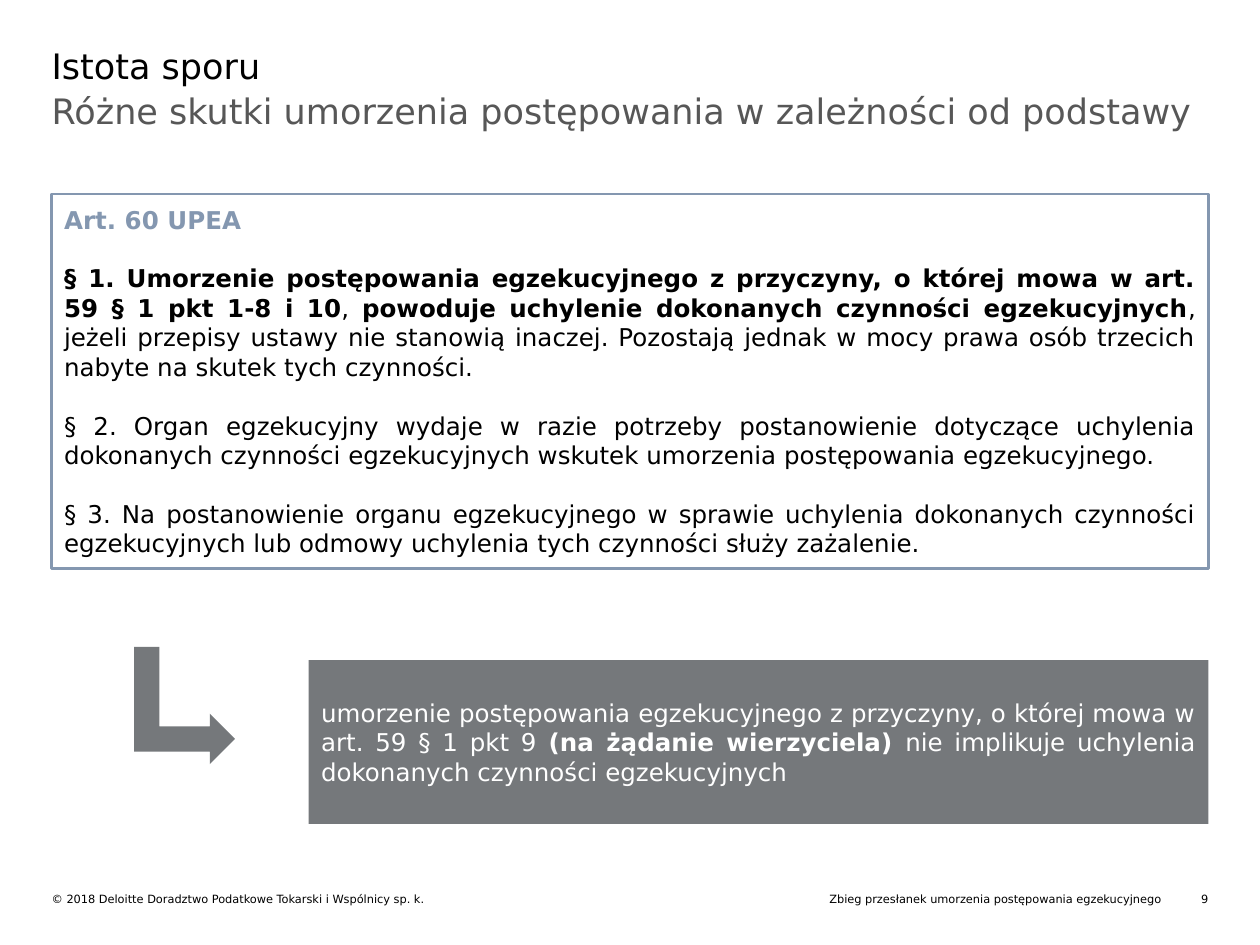
import dataclasses
import pptx
import pptx.util
import pptx.dml.color
import pptx.enum.shapes
import pptx.enum.text
import pptx.oxml
import pptx.oxml.ns

SHAPE = pptx.enum.shapes.MSO_SHAPE
ALIGN = pptx.enum.text.PP_ALIGN
ANCHOR = pptx.enum.text.MSO_ANCHOR


@dataclasses.dataclass(frozen=True)
class Theme:
    font: str = "DejaVu Sans"
    ink: str = "000000"
    subtitle: str = "575757"
    accent: str = "8497B0"
    dark: str = "75787B"
    light: str = "FFFFFF"
    heading: float = 20
    body: float = 14
    footer: float = 6.5
    gap: float = 16.8
    inset: float = 0.1


class Deck:
    """Builds slides on a grid of 100 columns by 75 rows."""

    def __init__(self, theme):
        self.theme = theme
        self.prs = pptx.Presentation()
        self.prs.slide_width = pptx.util.Inches(10)
        self.prs.slide_height = pptx.util.Inches(7.5)
        self.s = None

    def new_slide(self):
        self.s = self.prs.slides.add_slide(self.prs.slide_layouts[1])

    def box(self, col, row, cols, rows):
        w, h = self.prs.slide_width, self.prs.slide_height
        return int(col * w / 100), int(row * h / 75), int(cols * w / 100), int(rows * h / 75)

    def color(self, value):
        return pptx.dml.color.RGBColor.from_string(value)

    def add_text(self, sp, paragraphs, size, color, align=ALIGN.LEFT, anchor=ANCHOR.TOP, inset=0, gap=0):
        tf = sp.text_frame
        tf.word_wrap = True
        tf.auto_size = pptx.enum.text.MSO_AUTO_SIZE.NONE
        tf.vertical_anchor = anchor
        tf.margin_left = tf.margin_right = tf.margin_top = tf.margin_bottom = pptx.util.Inches(inset)
        for i, runs in enumerate(paragraphs):
            p = tf.add_paragraph() if i else tf.paragraphs[0]
            p.alignment = align
            p.space_before = pptx.util.Pt(gap if i else 0)
            for text, bold, *tint in runs:
                r = p.add_run()
                r.text = text
                r.font.name = self.theme.font
                r.font.size = pptx.util.Pt(size)
                r.font.bold = bold
                r.font.color.rgb = self.color(tint[0] if tint else color)

    def placeholder(self, index, place, text, color):
        sp = self.s.placeholders[index]
        sp.left, sp.top, sp.width, sp.height = self.box(*place)
        self.add_text(sp, [[(text, False)]], self.theme.heading, color)
        pPr = sp.text_frame.paragraphs[0]._p.get_or_add_pPr()
        pPr.set("marL", "0")
        pPr.set("indent", "0")
        pPr.append(pptx.oxml.parse_xml(f"<a:buNone {pptx.oxml.ns.nsdecls('a')}/>"))

    def shape(self, kind, place, fill=None, line=None, rotation=0):
        sp = self.s.shapes.add_shape(kind, *self.box(*place))
        sp.shadow.inherit = False
        sp.rotation = rotation
        if fill:
            sp.fill.solid()
            sp.fill.fore_color.rgb = self.color(fill)
        else:
            sp.fill.background()
        if line:
            sp.line.color.rgb = self.color(line)
            sp.line.width = pptx.util.Pt(1.5)
        else:
            sp.line.fill.background()
        return sp

    def panel(self, kind, place, paragraphs, color, fill=None, line=None):
        sp = self.shape(kind, place, fill, line)
        self.add_text(sp, paragraphs, self.theme.body, color, ALIGN.JUSTIFY,
                      ANCHOR.MIDDLE, self.theme.inset, self.theme.gap)

    def footer(self, place, text, align):
        sp = self.s.shapes.add_textbox(*self.box(*place))
        self.add_text(sp, [[(text, False)]], self.theme.footer, self.theme.ink, align)


def main():
    t = Theme()
    d = Deck(t)
    d.new_slide()
    left, width, foot = 4.1, 91.8, 70.8
    d.placeholder(0, (left, 3.5, width, 7.6), "Istota sporu", t.ink)
    d.placeholder(1, (left, 7.1, width, 8.3),
                  "Różne skutki umorzenia postępowania w zależności od podstawy", t.subtitle)

    article = [
        [("Art. 60 UPEA", True, t.accent)],
        [("§ 1. Umorzenie postępowania egzekucyjnego z przyczyny, o której mowa w art. 59 § 1 pkt 1-8 i 10", True),
         (", ", False),
         ("powoduje uchylenie dokonanych czynności egzekucyjnych", True),
         (", jeżeli przepisy ustawy nie stanowią inaczej. Pozostają jednak w mocy prawa osób trzecich "
          "nabyte na skutek tych czynności.", False)],
        [("§ 2. Organ egzekucyjny wydaje w razie potrzeby postanowienie dotyczące uchylenia dokonanych "
          "czynności egzekucyjnych wskutek umorzenia postępowania egzekucyjnego.", False)],
        [("§ 3. Na postanowienie organu egzekucyjnego w sprawie uchylenia dokonanych czynności "
          "egzekucyjnych lub odmowy uchylenia tych czynności służy zażalenie.", False)],
    ]
    d.panel(SHAPE.FLOWCHART_PROCESS, (left, 15.4, width, 29.7), article, t.ink, line=t.accent)

    conclusion = [[
        ("umorzenie postępowania egzekucyjnego z przyczyny, o której mowa w art. 59 § 1 pkt 9 ", False),
        ("(na żądanie wierzyciela) ", True),
        ("nie implikuje uchylenia dokonanych czynności egzekucyjnych", False),
    ]]
    d.panel(SHAPE.RECTANGLE, (24.5, 52.4, 71.4, 13), conclusion, t.light, fill=t.dark)
    d.shape(SHAPE.BENT_UP_ARROW, (10, 52, 9.3, 8), fill=t.dark, rotation=90)

    d.footer((left, foot, 43.9, 1.1),
             "© 2018 Deloitte Doradztwo Podatkowe Tokarski i Wspólnicy sp. k.", ALIGN.LEFT)
    d.footer((52, foot, 40.2, 1.1),
             "Zbieg przesłanek umorzenia postępowania egzekucyjnego", ALIGN.RIGHT)
    d.footer((93.4, foot, 2.5, 1.1), "9", ALIGN.RIGHT)
    d.prs.save("out.pptx")


if __name__ == "__main__":
    main()
